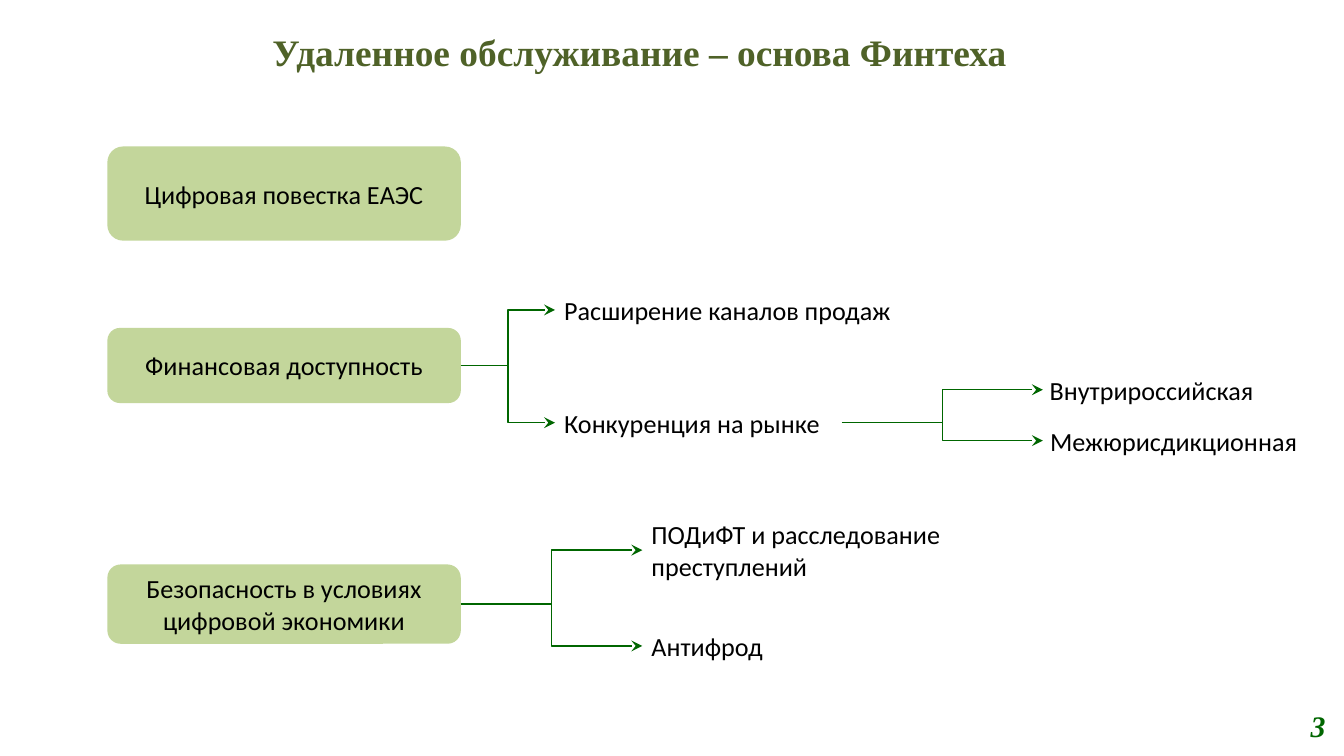
from dataclasses import dataclass

import pptx
import pptx.dml.color
import pptx.enum.shapes
import pptx.enum.text
import pptx.oxml.ns
import pptx.util
from lxml import etree

Cm = pptx.util.Cm
RGB = pptx.dml.color.RGBColor.from_string
Align = pptx.enum.text.PP_ALIGN
Anchor = pptx.enum.text.MSO_ANCHOR
RIGHT, LEFT = 3, 1  # connection sites of a rounded rectangle


@dataclass(frozen=True)
class Theme:
    head: str = "Times New Roman"
    body: str = "Calibri"
    olive: str = "4F6228"
    green: str = "006600"
    pale: str = "C3D69B"
    ink: str = "000000"
    title: int = 20
    page: int = 16
    text: int = 14
    line: float = 0.75


@dataclass(frozen=True)
class Node:
    text: str
    left: float
    top: float
    width: float
    height: float = 1.5
    solid: bool = False
    kids: tuple = ()


THEME = Theme()
ROOT_X, ROOT_W = 2.03, 6.68
SALES_X, RISK_X, MARKET_X = 10.49, 12.14, 19.71

NODES = (
    Node("Цифровая повестка ЕАЭС", ROOT_X, 2.77, ROOT_W, 1.78, True),
    Node("Финансовая доступность", ROOT_X, 6.2, ROOT_W, 1.42, True, (
        Node("Расширение каналов продаж", SALES_X, 5.11, 6.6),
        Node("Конкуренция на рынке", SALES_X, 7.24, 5.42, kids=(
            Node("Внутрироссийская", MARKET_X, 7.09, 5.21, 0.56),
            Node("Межюрисдикционная", MARKET_X, 7.95, 5.21, 0.76),
        )),
    )),
    Node("Безопасность в условиях цифровой экономики",
         ROOT_X, 10.67, ROOT_W, 1.5, True, (
             Node("ПОДиФТ и расследование преступлений", RISK_X, 9.65, 7.57),
             Node("Антифрод", RISK_X, 11.46, 4.57),
         )),
)


def write(frame, text: str, face: str, size: int, color: str, align,
          bold: bool = False, slant: bool = False) -> None:
    frame.word_wrap = True
    para = frame.paragraphs[0]
    para.text = text
    para.alignment = align
    font = para.font
    font.name, font.size = face, pptx.util.Pt(size)
    font.bold, font.italic = bold, slant
    font.color.rgb = RGB(color)


def join(slide, start, end) -> None:
    """Draw an elbow arrow from the right side of start to the left of end."""
    link = slide.shapes.add_connector(
        pptx.enum.shapes.MSO_CONNECTOR.ELBOW, 0, 0, 0, 0)
    link.begin_connect(start, RIGHT)
    link.end_connect(end, LEFT)
    link.line.color.rgb = RGB(THEME.green)
    link.line.width = pptx.util.Pt(THEME.line)
    tag = pptx.oxml.ns.qn
    etree.SubElement(link.line._get_or_add_ln(), tag("a:tailEnd"),
                     type="stealth")
    etree.SubElement(link._element.spPr, tag("a:effectLst"))


def draw(slide, node: Node):
    """Draw a node and its branches, and return the node's shape."""
    shape = slide.shapes.add_shape(
        pptx.enum.shapes.MSO_SHAPE.ROUNDED_RECTANGLE,
        Cm(node.left), Cm(node.top), Cm(node.width), Cm(node.height))
    shape.shadow.inherit = False
    shape.line.fill.background()
    if node.solid:
        shape.fill.solid()
        shape.fill.fore_color.rgb = RGB(THEME.pale)
    else:
        shape.fill.background()
    frame = shape.text_frame
    frame.margin_left = frame.margin_right = Cm(0.1)
    frame.margin_top = frame.margin_bottom = Cm(0.13)
    frame.vertical_anchor = Anchor.MIDDLE
    write(frame, node.text, THEME.body, THEME.text, THEME.ink,
          Align.CENTER if node.solid else Align.LEFT)
    for kid in node.kids:
        join(slide, shape, draw(slide, kid))
    return shape


def main() -> None:
    deck = pptx.Presentation()
    deck.slide_width, deck.slide_height = Cm(25.4), Cm(14.29)
    slide = deck.slides.add_slide(deck.slide_layouts[6])

    title = slide.shapes.add_textbox(
        Cm(4.9), Cm(0.36), Cm(19.41), Cm(1.35)).text_frame
    title.margin_top = Cm(0.2)
    write(title, "Удаленное обслуживание – основа Финтеха", THEME.head,
          THEME.title, THEME.olive, Align.LEFT, bold=True)

    page = slide.shapes.add_textbox(
        Cm(24.31), Cm(13.34), Cm(0.99), Cm(0.74)).text_frame
    page.vertical_anchor = Anchor.MIDDLE
    write(page, "3", THEME.head, THEME.page, THEME.green, Align.RIGHT,
          bold=True, slant=True)

    for node in NODES:
        draw(slide, node)
    deck.save("out.pptx")


if __name__ == "__main__":
    main()
